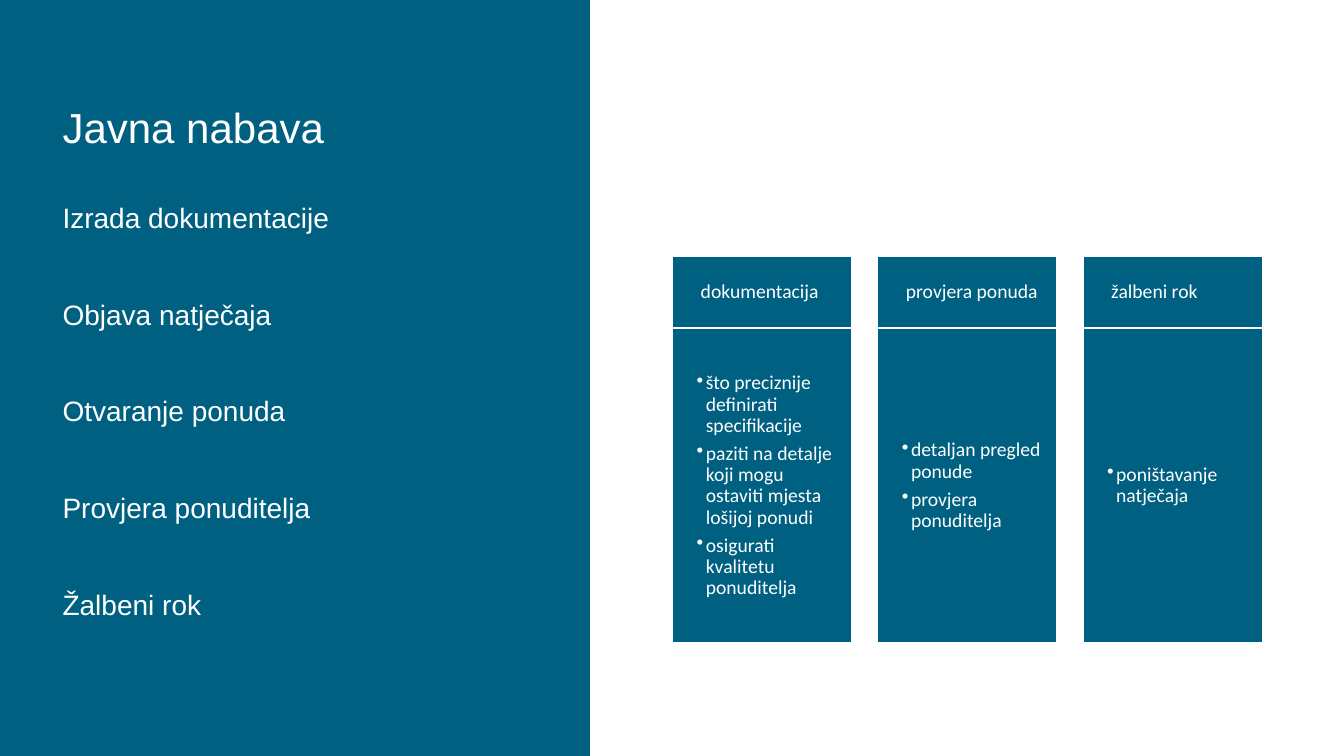
from dataclasses import dataclass

from lxml import etree
from pptx import Presentation
from pptx import util as u
from pptx.dml.color import RGBColor
from pptx.enum import shapes, text
from pptx.oxml.ns import qn

COLOURS = {"teal": "006081", "paper": "FEFFFE", "white": "FFFFFF"}
SLIDE_WIDTH, SLIDE_HEIGHT = 13.33, 7.5
PANEL_WIDTH = 5.85
COLUMN_LEFT, COLUMN_PITCH, COLUMN_WIDTH = 6.67, 2.035, 1.78
HEADER_TOP, HEADER_HEIGHT = 2.54, 0.71
DETAIL_TOP, DETAIL_HEIGHT = 3.26, 3.12


@dataclass
class Column:
    heading: str
    points: list[str]


@dataclass
class Style:
    font: str
    size: float
    colour: str
    line_spacing: float = 1.0
    space_before: float = 0
    bullet: str = ""


TITLE = Style("Arial", 30, "paper", line_spacing=0.9)
STEP = Style("Arial", 20, "white", space_before=45)
HEADING = Style("Calibri", 14, "paper", line_spacing=0.9)
POINT = Style("Calibri", 14, "paper", line_spacing=0.9, space_before=4.9, bullet="•")

STEPS = [
    "Izrada dokumentacije",
    "Objava natječaja",
    "Otvaranje ponuda",
    "Provjera ponuditelja",
    "Žalbeni rok",
]
COLUMNS = [
    Column("dokumentacija", [
        "što preciznije definirati specifikacije",
        "paziti na detalje koji mogu ostaviti mjesta lošijoj ponudi",
        "osigurati kvalitetu ponuditelja",
    ]),
    Column("provjera ponuda", ["detaljan pregled ponude", "provjera ponuditelja"]),
    Column("žalbeni rok", ["poništavanje natječaja"]),
]


def colour(name: str) -> RGBColor:
    return RGBColor.from_string(COLOURS[name])


def set_bullet(para, symbol: str) -> None:
    """Give the paragraph a hanging bullet, or clear the inherited one."""
    props = para._p.get_or_add_pPr()
    props.set("marL", str(u.Inches(0.09) if symbol else 0))
    props.set("indent", str(u.Inches(-0.1) if symbol else 0))
    if symbol:
        etree.SubElement(props, qn("a:buChar")).set("char", symbol)
    else:
        etree.SubElement(props, qn("a:buNone"))


def write(box, lines: list[str], style: Style, anchor, insets: tuple) -> None:
    frame = box.text_frame
    frame.word_wrap = True
    frame.auto_size = text.MSO_AUTO_SIZE.NONE
    frame.vertical_anchor = anchor
    (frame.margin_left, frame.margin_top,
     frame.margin_right, frame.margin_bottom) = map(u.Inches, insets)
    for index, line in enumerate(lines):
        para = frame.add_paragraph() if index else frame.paragraphs[0]
        set_bullet(para, style.bullet)
        para.alignment = text.PP_ALIGN.LEFT
        para.line_spacing = style.line_spacing
        para.space_before = u.Pt(style.space_before if index else 0)
        span = para.add_run()
        span.text = line
        span.font.name = style.font
        span.font.size = u.Pt(style.size)
        span.font.color.rgb = colour(style.colour)


def place(box, left: float, top: float, width: float, height: float) -> None:
    box.left, box.top = u.Inches(left), u.Inches(top)
    box.width, box.height = u.Inches(width), u.Inches(height)


def add_block(page, left: float, top: float, width: float, height: float,
              outlined: bool = True):
    block = page.shapes.add_shape(
        shapes.MSO_SHAPE.RECTANGLE, *map(u.Inches, (left, top, width, height)))
    block.shadow.inherit = False
    block.fill.solid()
    block.fill.fore_color.rgb = colour("teal")
    if outlined:
        block.line.color.rgb = colour("paper")
        block.line.width = u.Pt(1)
    else:
        block.line.fill.background()
    return block


def add_column(page, column: Column, left: float) -> None:
    middle = text.MSO_ANCHOR.MIDDLE
    header = add_block(page, left, HEADER_TOP, COLUMN_WIDTH, HEADER_HEIGHT)
    write(header, [column.heading], HEADING, middle, (0.28, 0.04, 0.04, 0.04))
    detail = add_block(page, left, DETAIL_TOP, COLUMN_WIDTH, DETAIL_HEIGHT)
    write(detail, column.points, POINT, middle, (0.24, 0.04, 0.12, 0.04))


def main() -> None:
    deck = Presentation()
    deck.slide_width, deck.slide_height = u.Inches(SLIDE_WIDTH), u.Inches(SLIDE_HEIGHT)
    page = deck.slides.add_slide(deck.slide_layouts[1])
    page.background.fill.solid()
    page.background.fill.fore_color.rgb = colour("paper")

    panel = add_block(page, 0, 0, PANEL_WIDTH, SLIDE_HEIGHT, outlined=False)
    page.shapes._spTree.insert(2, panel._element)  # behind the placeholders

    insets = (0.1, 0.05, 0.1, 0.05)
    title, body = page.shapes.title, page.placeholders[1]
    place(title, 0.52, 0.52, 4.78, 1.04)
    write(title, ["Javna nabava"], TITLE, text.MSO_ANCHOR.BOTTOM, insets)
    place(body, 0.52, 1.94, 4.78, 5.05)
    write(body, STEPS, STEP, text.MSO_ANCHOR.TOP, insets)

    for index, column in enumerate(COLUMNS):
        add_column(page, column, COLUMN_LEFT + index * COLUMN_PITCH)
    deck.save("out.pptx")


if __name__ == "__main__":
    main()
